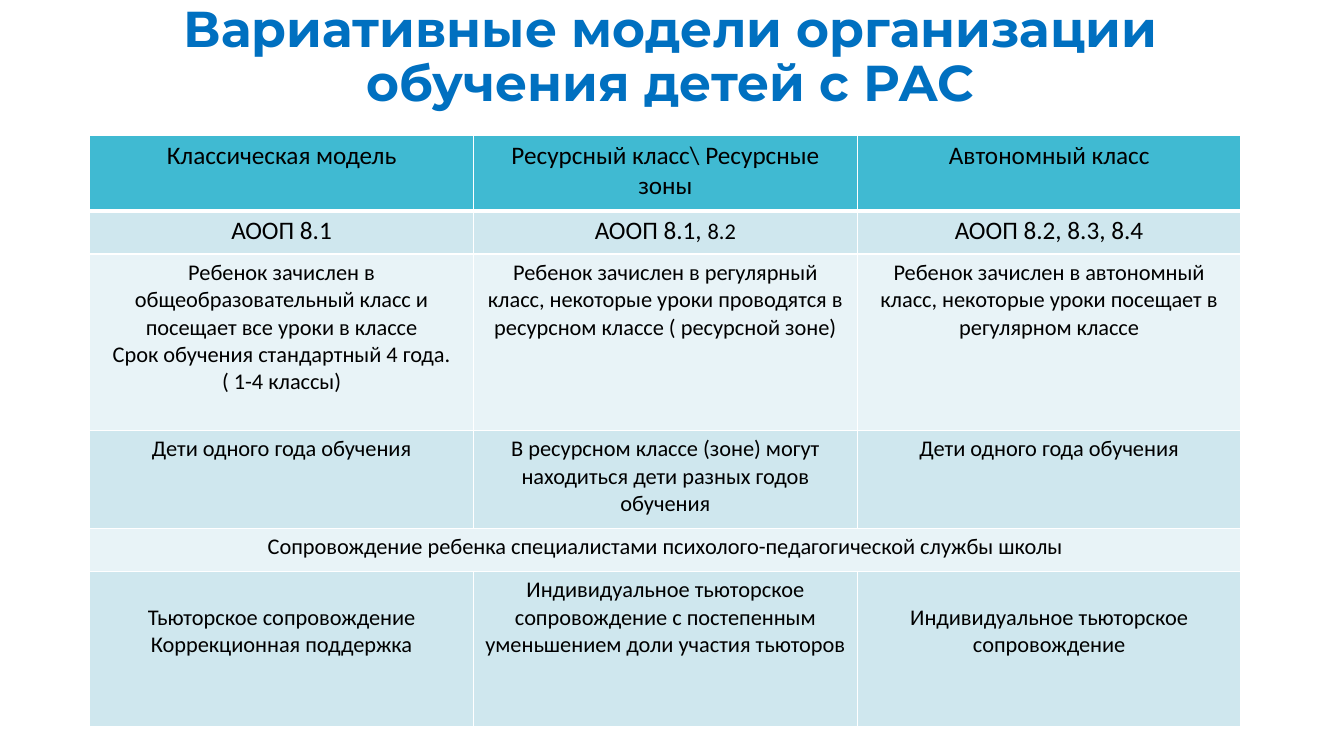
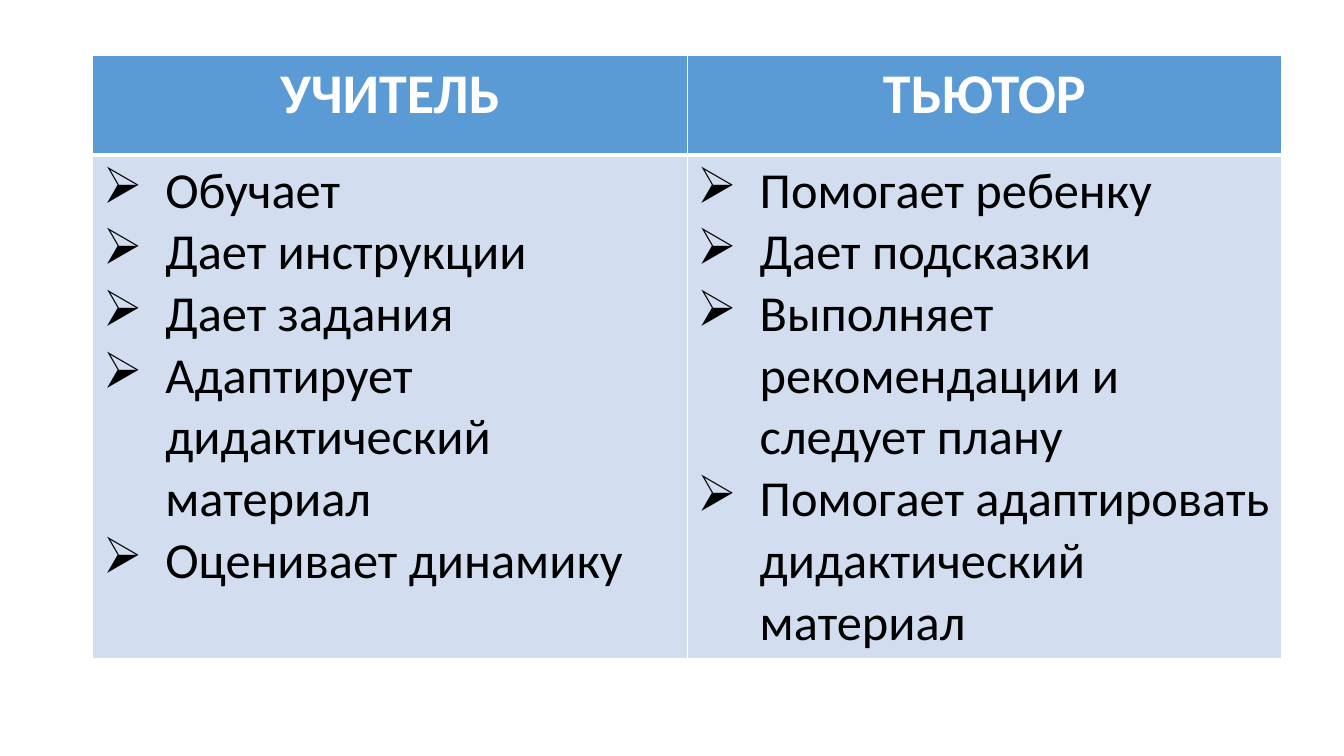
from lxml import etree
from pptx import Presentation
from pptx.dml.color import RGBColor
from pptx.enum.text import MSO_ANCHOR as Anchor, MSO_AUTO_SIZE as AutoSize, PP_ALIGN as Align
from pptx.oxml.ns import qn
from pptx.util import Emu, Inches, Pt

SLIDE_WIDTH, SLIDE_HEIGHT = Inches(13.33), Inches(7.5)
TITLE_ONLY_LAYOUT, BLANK_LAYOUT = 5, 6

TITLE_BLUE = RGBColor(0x00, 0x70, 0xC0)
TEAL = RGBColor(0x40, 0xBA, 0xD2)
TEAL_BAND = RGBColor(0xCF, 0xE7, 0xEE)
TEAL_PALE = RGBColor(0xE8, 0xF3, 0xF7)
ROLE_BLUE = RGBColor(0x5B, 0x9B, 0xD5)
ROLE_PALE = RGBColor(0xD2, 0xDE, 0xEF)
WHITE = RGBColor(0xFF, 0xFF, 0xFF)
BLACK = RGBColor(0x00, 0x00, 0x00)

TITLE_FONT, TABLE_FONT = "Montserrat", "Calibri"
HEADER_SIZE, BODY_SIZE = Pt(18), Pt(16)
THIN, THICK = Pt(1), Pt(3)
BULLET_INDENT = Inches(0.62)

MODEL_ROW_HEIGHTS = [0.75, 0.43, 1.75, 0.97, 0.43, 1.54]
SUPPORT_ROW = 4
MODEL_ROWS = [
    ["Классическая модель", "Ресурсный класс\\ Ресурсные зоны", "Автономный класс"],
    ["АООП 8.1", "АООП 8.1, ", "АООП 8.2, 8.3, 8.4"],
    ["Ребенок зачислен в общеобразовательный класс и посещает все уроки в классе\n"
     "Срок обучения стандартный 4 года.\n( 1-4 классы)",
     "Ребенок зачислен в регулярный класс, некоторые уроки проводятся "
     "в ресурсном классе ( ресурсной зоне)",
     "Ребенок зачислен в автономный класс, некоторые уроки посещает в регулярном классе"],
    ["Дети одного года обучения",
     "В ресурсном классе (зоне) могут находиться дети разных годов обучения",
     "Дети одного года обучения"],
    ["Сопровождение ребенка специалистами психолого-педагогической службы школы"],
    ["Тьюторское сопровождение\nКоррекционная поддержка",
     "Индивидуальное тьюторское сопровождение с постепенным уменьшением доли участия тьюторов",
     "Индивидуальное тьюторское сопровождение"],
]

ROLE_ROW_HEIGHTS = [0.99, 4.97]
ROLES = {
    "УЧИТЕЛЬ": ["Обучает", "Дает инструкции", "Дает задания",
                "Адаптирует дидактический материал", "Оценивает динамику"],
    "ТЬЮТОР": ["Помогает ребенку", "Дает подсказки",
               "Выполняет рекомендации и следует плану",
               "Помогает адаптировать дидактический материал"],
}


def add_title(slide, text):
    title = slide.shapes.title
    title.left, title.top = Inches(0.9), Inches(0.03)
    title.width, title.height = Inches(11.5), Inches(1.1)
    frame = title.text_frame
    frame.text = text
    frame.word_wrap = True
    frame.auto_size = AutoSize.NONE
    frame.vertical_anchor = Anchor.MIDDLE
    paragraph = frame.paragraphs[0]
    paragraph.alignment = Align.CENTER
    paragraph.line_spacing = 0.9
    style_font(paragraph.font, TITLE_FONT, Pt(36), TITLE_BLUE, bold=True)


def style_font(font, name, size, color, bold=False):
    font.name, font.size, font.bold = name, size, bold
    font.color.rgb = color


def add_grid(slide, left, top, width, row_heights, column_count):
    """Add a table with equal columns and white rules, thicker under the header."""
    heights = [Inches(height) for height in row_heights]
    table = slide.shapes.add_table(len(heights), column_count, Inches(left), Inches(top),
                                   Inches(width), Emu(sum(heights))).table
    table.first_row = table.horz_banding = False
    for row, height in zip(table.rows, heights):
        row.height = height
    for row_index in range(len(heights)):
        for column in range(column_count):
            set_borders(table.cell(row_index, column),
                        top=THICK if row_index == 1 else THIN,
                        bottom=THICK if row_index == 0 else THIN)
    return table


def set_borders(cell, top, bottom):
    properties = cell._tc.get_or_add_tcPr()
    for tag, width in (("a:lnL", THIN), ("a:lnR", THIN), ("a:lnT", top), ("a:lnB", bottom)):
        line = etree.SubElement(properties, qn(tag), w=str(int(width)))
        fill = etree.SubElement(line, qn("a:solidFill"))
        etree.SubElement(fill, qn("a:srgbClr"), val=str(WHITE))


def fill_cell(cell, text, fill, size, color=BLACK, bold=False, align=Align.CENTER):
    cell.fill.solid()
    cell.fill.fore_color.rgb = fill
    cell.text = text
    for paragraph in cell.text_frame.paragraphs:
        paragraph.alignment = align
        style_font(paragraph.font, TABLE_FONT, size, color, bold)


def add_bullets(cell):
    for paragraph in cell.text_frame.paragraphs:
        properties = paragraph._p.get_or_add_pPr()
        properties.set("marL", str(int(BULLET_INDENT)))
        properties.set("indent", str(-int(BULLET_INDENT)))
        bullet = etree.Element(qn("a:buChar"), char="➢")
        properties.insert(0, bullet)


def build_models_slide(presentation):
    slide = presentation.slides.add_slide(presentation.slide_layouts[TITLE_ONLY_LAYOUT])
    add_title(slide, "Вариативные модели организации обучения детей с РАС")
    table = add_grid(slide, 0.89, 1.34, 11.42, MODEL_ROW_HEIGHTS, 3)
    table.cell(SUPPORT_ROW, 0).merge(table.cell(SUPPORT_ROW, 2))
    for row, texts in enumerate(MODEL_ROWS):
        fill = TEAL if row == 0 else TEAL_BAND if row % 2 else TEAL_PALE
        size = HEADER_SIZE if row < 2 else BODY_SIZE
        for column, text in enumerate(texts):
            fill_cell(table.cell(row, column), text, fill, size)

    extra_program = table.cell(1, 1).text_frame.paragraphs[0].add_run()
    extra_program.text = "8.2"
    extra_program.font.size = BODY_SIZE
    for column in (0, 2):
        table.cell(len(MODEL_ROWS) - 1, column).margin_top = Inches(0.32)


def build_roles_slide(presentation):
    slide = presentation.slides.add_slide(presentation.slide_layouts[BLANK_LAYOUT])
    table = add_grid(slide, 0.92, 0.55, 11.79, ROLE_ROW_HEIGHTS, len(ROLES))
    for column, (role, duties) in enumerate(ROLES.items()):
        fill_cell(table.cell(0, column), role, ROLE_BLUE, Pt(40), WHITE, bold=True)
        duties_cell = table.cell(1, column)
        fill_cell(duties_cell, "\n".join(duties), ROLE_PALE, Pt(36), align=Align.LEFT)
        add_bullets(duties_cell)


def main():
    presentation = Presentation()
    presentation.slide_width, presentation.slide_height = SLIDE_WIDTH, SLIDE_HEIGHT
    build_models_slide(presentation)
    build_roles_slide(presentation)
    presentation.save("out.pptx")


if __name__ == "__main__":
    main()
